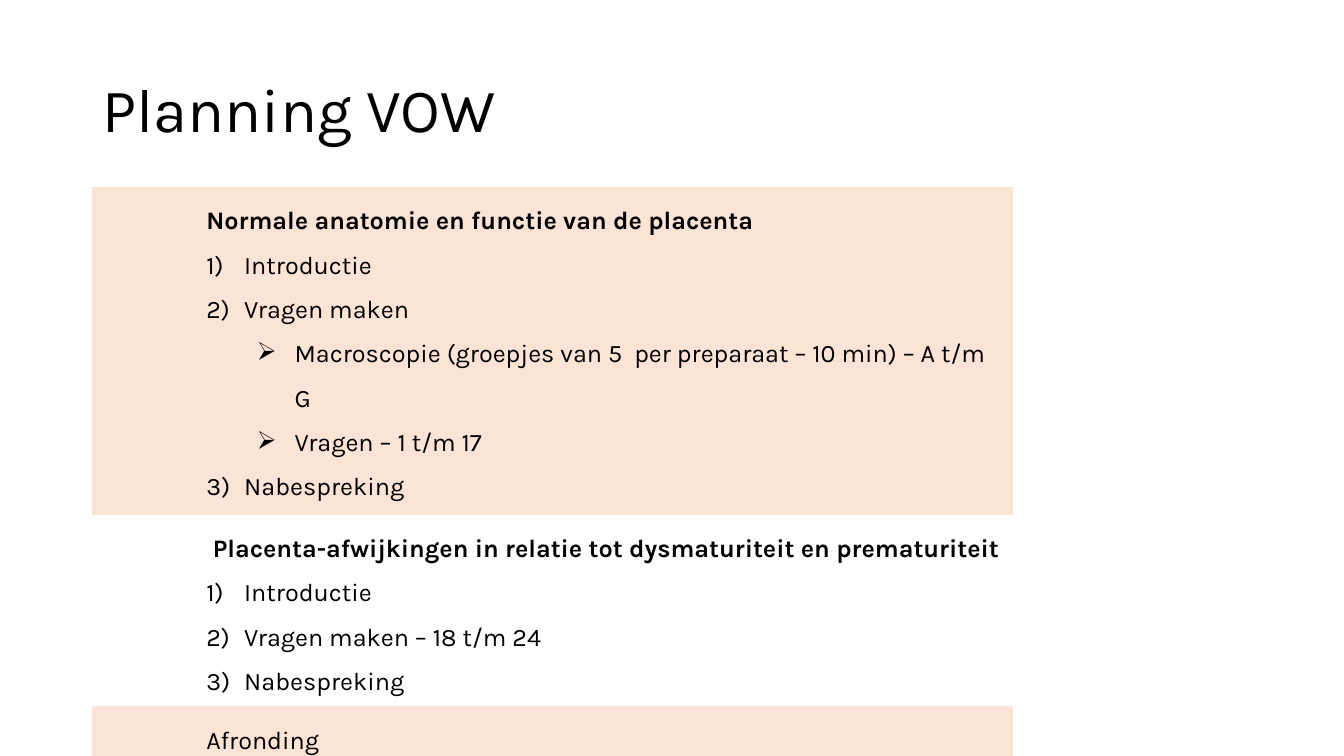
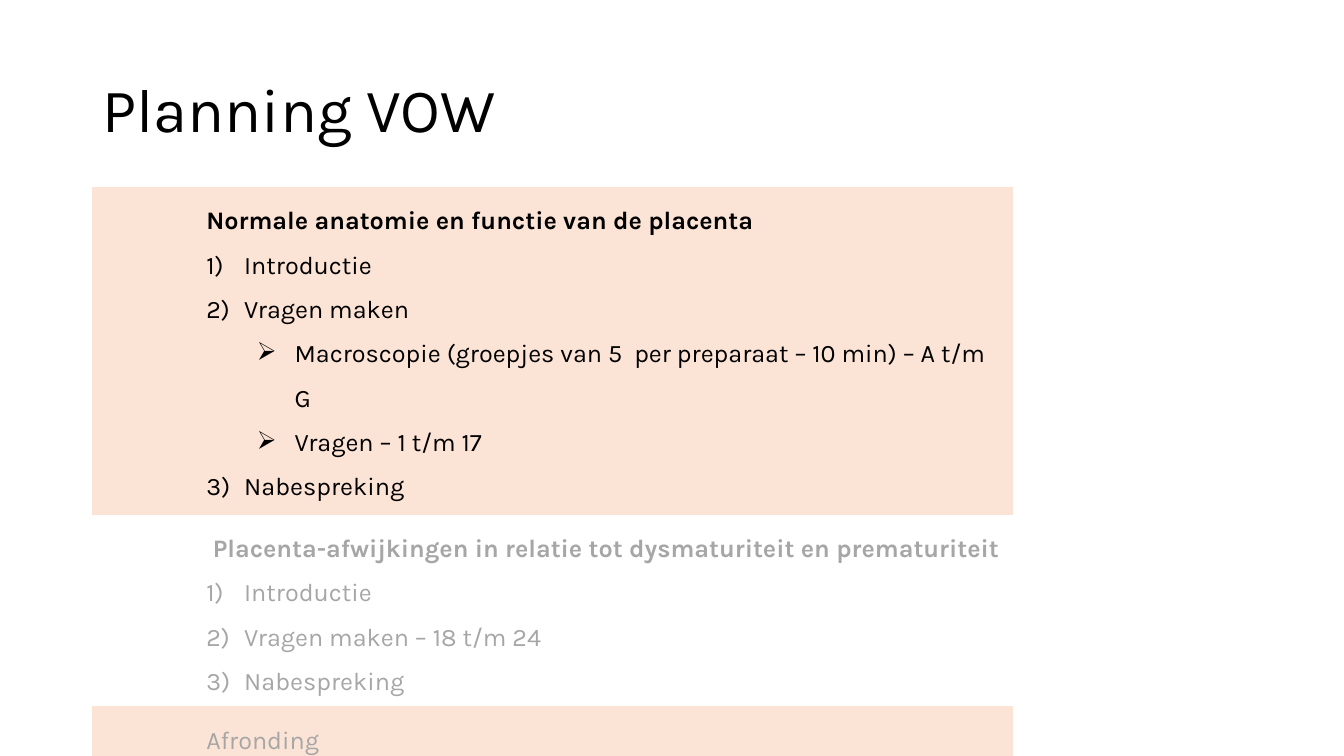
from lxml import etree
from pptx import Presentation
from pptx import util as u
from pptx.dml.color import RGBColor
from pptx.enum import text
from pptx.oxml import ns

PX = 9525
FONT = "Karla"
BLACK = "000000"
GREY = "A6A6A6"
PEACH = "FBE3D6"
NO_GRID_STYLE = "{2D5ABB26-0587-4C30-8999-92F81FD0307C}"
COLUMN_WIDTHS = (99, 778)
ROW_HEIGHT = 57
HANGING = 36
BULLETS = {
    "number": (0, 36, "a:buAutoNum", {"type": "arabicParenR"}),
    "arrow": (1, 84, "a:buChar", {"char": "➢"}),
}

PLANNING = [
    [
        ("heading", "Normale anatomie en functie van de placenta"),
        ("number", "Introductie"),
        ("number", "Vragen maken"),
        ("arrow", "Macroscopie (groepjes van 5  per preparaat – 10 min) – A t/m G"),
        ("arrow", "Vragen – 1 t/m 17"),
        ("number", "Nabespreking"),
    ],
    [
        ("heading", " Placenta-afwijkingen in relatie tot dysmaturiteit en prematuriteit"),
        ("number", "Introductie"),
        ("number", "Vragen maken – 18 t/m 24"),
        ("number", "Nabespreking"),
    ],
    [("plain", "Afronding")],
]


def px(length):
    return u.Emu(length * PX)


def rgb(value):
    return RGBColor.from_string(value)


def write(paragraph, content, size=18, color=BLACK, bold=False, spacing=1.5):
    paragraph.line_spacing = spacing
    run = paragraph.add_run()
    run.text = content
    run.font.name = FONT
    run.font.size = u.Pt(size)
    run.font.bold = bold
    run.font.color.rgb = rgb(color)


def add_bullet(paragraph, kind):
    level, margin, tag, attributes = BULLETS[kind]
    paragraph.level = level
    properties = paragraph._p.get_or_add_pPr()
    properties.set("marL", str(px(margin)))
    properties.set("indent", str(-px(HANGING)))
    etree.SubElement(properties, ns.qn(tag), attributes)


def add_title(slide, content):
    frame = slide.shapes.add_textbox(px(88), px(38), px(1104), px(139)).text_frame
    frame.word_wrap = True
    frame.vertical_anchor = text.MSO_ANCHOR.MIDDLE
    write(frame.paragraphs[0], content, size=44, spacing=0.9)


def fill_cell(cell, color):
    if color:
        cell.fill.solid()
        cell.fill.fore_color.rgb = rgb(color)
    else:
        cell.fill.background()


def write_section(cell, lines, color):
    frame = cell.text_frame
    for index, (kind, content) in enumerate(lines):
        paragraph = frame.add_paragraph() if index else frame.paragraphs[0]
        write(paragraph, content, color=color, bold=kind == "heading")
        if kind in BULLETS:
            add_bullet(paragraph, kind)


def add_planning_table(slide, sections, colors):
    frame = slide.shapes.add_table(
        len(sections), len(COLUMN_WIDTHS), px(88), px(178),
        px(sum(COLUMN_WIDTHS)), px(ROW_HEIGHT * len(sections)),
    )
    table = frame.table
    table.first_row = False
    table.horz_banding = False
    table._tbl.tblPr.find(ns.qn("a:tableStyleId")).text = NO_GRID_STYLE
    for column, width in zip(table.columns, COLUMN_WIDTHS):
        column.width = px(width)
    for index, (lines, color) in enumerate(zip(sections, colors)):
        for cell in table.rows[index].cells:
            fill_cell(cell, None if index % 2 else PEACH)
        write_section(table.cell(index, 1), lines, color)


def main():
    presentation = Presentation()
    presentation.slide_width = px(1280)
    presentation.slide_height = px(720)
    for colors in ((BLACK, BLACK, BLACK), (BLACK, GREY, GREY)):
        slide = presentation.slides.add_slide(presentation.slide_layouts[6])
        add_title(slide, "Planning VOW")
        add_planning_table(slide, PLANNING, colors)
    presentation.save("out.pptx")


if __name__ == "__main__":
    main()
